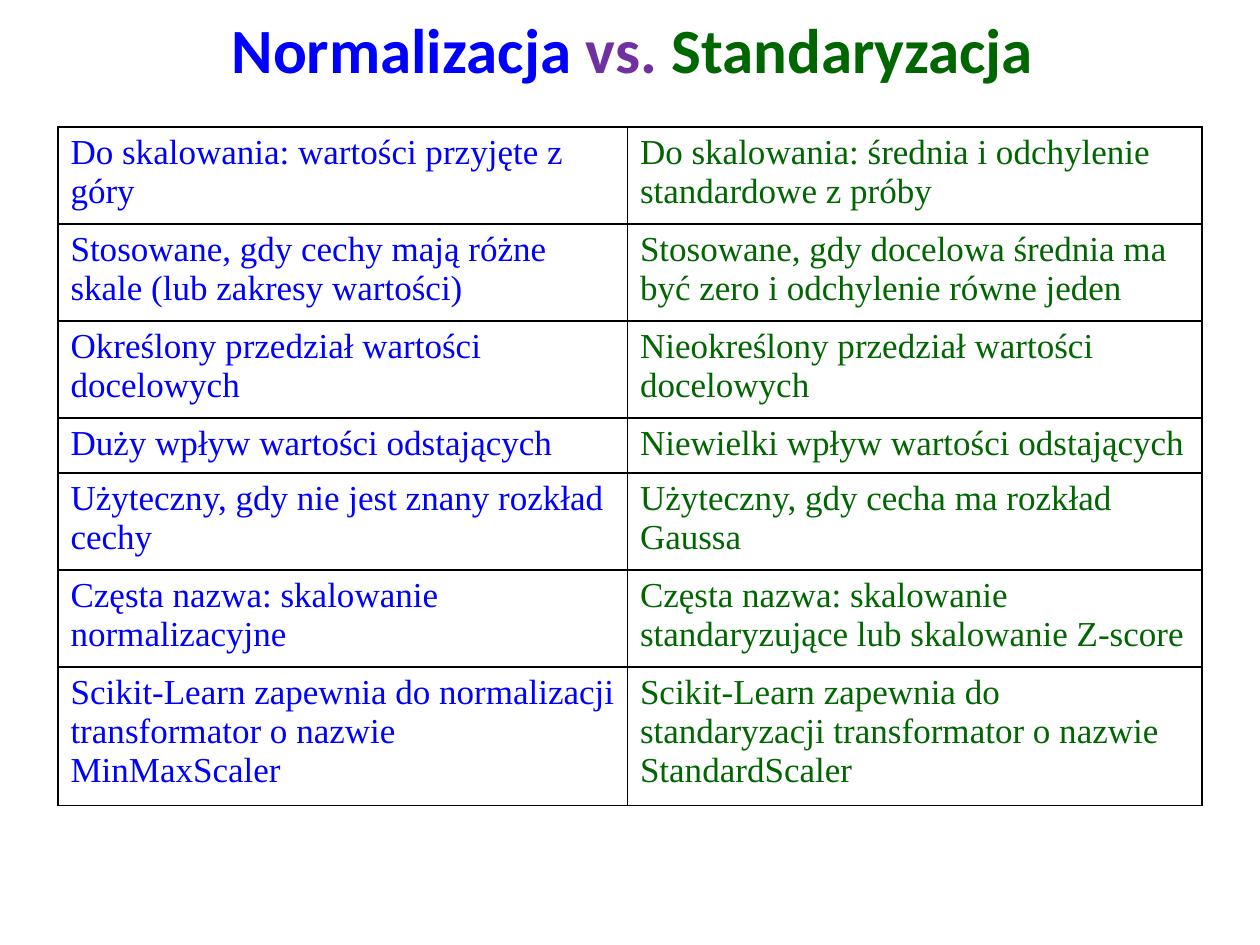
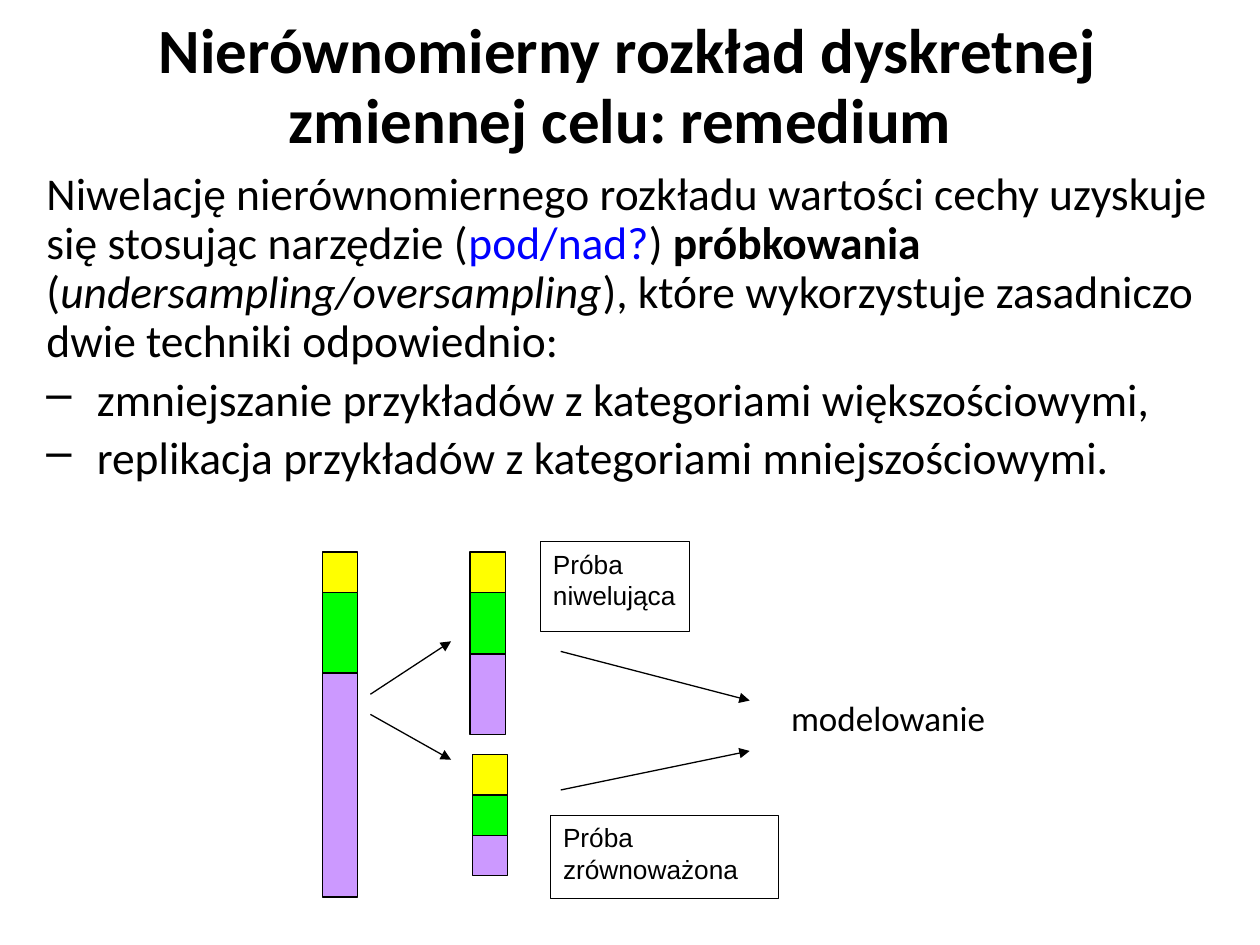
from lxml.etree import SubElement
from pptx import Presentation
from pptx.dml.color import RGBColor
from pptx.enum.shapes import MSO_CONNECTOR, MSO_SHAPE
from pptx.enum.text import MSO_ANCHOR, PP_ALIGN
from pptx.oxml import parse_xml
from pptx.oxml.ns import nsdecls, qn
from pptx.util import Inches, Pt

BLACK, WHITE, BLUE, GREEN, PURPLE = "000000", "FFFFFF", "0000FF", "006600", "7030A0"
STACK_COLORS = ("FFFF00", "00FF00", "CC99FF")
LINE_WIDTH = 0.75

COMPARISON = [
    ("Do skalowania: wartości przyjęte z góry",
     "Do skalowania: średnia i odchylenie standardowe z próby"),
    ("Stosowane, gdy cechy mają różne skale (lub zakresy wartości)",
     "Stosowane, gdy docelowa średnia ma być zero i odchylenie równe jeden"),
    ("Określony przedział wartości docelowych",
     "Nieokreślony przedział wartości docelowych"),
    ("Duży wpływ wartości odstających",
     "Niewielki wpływ wartości odstających"),
    ("Użyteczny, gdy nie jest znany rozkład cechy",
     "Użyteczny, gdy cecha ma rozkład Gaussa"),
    ("Częsta nazwa: skalowanie normalizacyjne",
     "Częsta nazwa: skalowanie standaryzujące lub skalowanie Z-score"),
    ("Scikit-Learn zapewnia do normalizacji transformator o nazwie MinMaxScaler",
     "Scikit-Learn zapewnia do standaryzacji transformator o nazwie StandardScaler"),
]
ROW_HEIGHTS = (0.77, 0.77, 0.77, 0.43, 0.77, 0.77, 1.1)
COLUMN_WIDTHS = (4.52, 4.56)


def rgb(color):
    return RGBColor.from_string(color)


def add_run(paragraph, text, size, font="Calibri", color=BLACK, bold=False, italic=False):
    run = paragraph.add_run()
    run.text = text
    run.font.name = font
    run.font.size = Pt(size)
    run.font.color.rgb = rgb(color)
    run.font.bold = bold
    run.font.italic = italic


def add_text_box(slide, box, wrap=True):
    frame = slide.shapes.add_textbox(*map(Inches, box)).text_frame
    frame.word_wrap = wrap
    return frame


def add_title(slide, box, lines, line_spacing=None):
    frame = add_text_box(slide, box)
    frame.vertical_anchor = MSO_ANCHOR.MIDDLE
    paragraph = frame.paragraphs[0]
    paragraph.alignment = PP_ALIGN.CENTER
    if line_spacing:
        paragraph.line_spacing = Pt(line_spacing)
    for index, runs in enumerate(lines):
        if index:
            paragraph.add_line_break()
        for text, color in runs:
            add_run(paragraph, text, 36, color=color, bold=True)


def add_borders(cell):
    properties = cell._tc.get_or_add_tcPr()
    for index, side in enumerate(("lnL", "lnR", "lnT", "lnB")):
        properties.insert(index, parse_xml(
            f'<a:{side} {nsdecls("a")} w="{Pt(1)}"><a:solidFill>'
            f'<a:srgbClr val="{BLACK}"/></a:solidFill></a:{side}>'))


def add_comparison_table(slide, left, top):
    box = (left, top, sum(COLUMN_WIDTHS), sum(ROW_HEIGHTS))
    table = slide.shapes.add_table(
        len(COMPARISON), len(COLUMN_WIDTHS), *map(Inches, box)).table
    table.first_row = table.horz_banding = False
    for column, width in zip(table.columns, COLUMN_WIDTHS):
        column.width = Inches(width)
    for row, height, texts in zip(table.rows, ROW_HEIGHTS, COMPARISON):
        row.height = Inches(height)
        for cell, text, color in zip(row.cells, texts, (BLUE, GREEN)):
            cell.fill.background()
            add_borders(cell)
            add_run(cell.text_frame.paragraphs[0], text, 20, "Times New Roman", color)


def add_body(slide, box):
    frame = add_text_box(slide, box)
    intro = frame.paragraphs[0]
    for text, style in (
        ("Niwelację nierównomiernego rozkładu wartości cechy uzyskuje się stosując narzędzie (", {}),
        ("pod/nad?", {"color": BLUE}),
        (") ", {}),
        ("próbkowania ", {"bold": True}),
        ("(", {}),
        ("undersampling/oversampling", {"italic": True}),
        ("), które wykorzystuje zasadniczo dwie techniki odpowiednio:", {}),
    ):
        add_run(intro, text, 26, **style)
    for text in ("zmniejszanie przykładów z kategoriami większościowymi,",
                 "replikacja przykładów z kategoriami mniejszościowymi."):
        paragraph = frame.add_paragraph()
        paragraph.level = 1
        add_run(paragraph, text, 26)
    for paragraph in frame.paragraphs:
        paragraph.line_spacing = 0.9
        paragraph.space_before = Pt(5.2)
    for paragraph in frame.paragraphs[1:]:
        properties = paragraph._p.get_or_add_pPr()
        properties.set("marL", str(Inches(0.4)))
        properties.set("indent", str(-Inches(0.4)))
        SubElement(properties, qn("a:buChar"), char="–")


def add_box(slide, box, fill):
    shape = slide.shapes.add_shape(MSO_SHAPE.RECTANGLE, *map(Inches, box))
    shape.shadow.inherit = False
    shape.fill.solid()
    shape.fill.fore_color.rgb = rgb(fill)
    shape.line.color.rgb = rgb(BLACK)
    shape.line.width = Pt(LINE_WIDTH)
    return shape


def add_stack(slide, left, top, heights):
    for height, color in zip(heights, STACK_COLORS):
        add_box(slide, (left, top, 0.28, height), color)
        top += height


def add_label(slide, box, text):
    frame = add_box(slide, box, WHITE).text_frame
    frame.word_wrap = True
    frame.vertical_anchor = MSO_ANCHOR.TOP
    paragraph = frame.paragraphs[0]
    paragraph.alignment = PP_ALIGN.LEFT
    paragraph.space_after = Pt(10)
    add_run(paragraph, text, 15, "Arial")


def add_arrow(slide, *ends):
    connector = slide.shapes.add_connector(MSO_CONNECTOR.STRAIGHT, *map(Inches, ends))
    connector.line.color.rgb = rgb(BLACK)
    connector.line.width = Pt(LINE_WIDTH)
    SubElement(connector.line._get_or_add_ln(), qn("a:tailEnd"), type="triangle")
    SubElement(connector._element.spPr, qn("a:effectLst"))


def add_sampling_diagram(slide, left, top):
    for x, y, heights in ((0, 0.08, (0.32, 0.64, 1.78)),
                          (1.17, 0.08, (0.32, 0.49, 0.64)),
                          (1.19, 1.69, (0.32, 0.32, 0.32))):
        add_stack(slide, left + x, top + y, heights)
    for x, y, end_x, end_y in ((0.38, 1.21, 1.02, 0.79), (0.38, 1.37, 1.02, 1.73),
                               (1.89, 0.87, 3.39, 1.26), (1.89, 1.97, 3.39, 1.66)):
        add_arrow(slide, left + x, top + y, left + end_x, top + end_y)
    add_label(slide, (left + 1.73, top, 1.18, 0.71), "Próba niwelująca")
    add_label(slide, (left + 1.81, top + 2.17, 1.81, 0.66), "Próba zrównoważona")
    result = add_text_box(slide, (left + 3.62, top + 1.18, 1.76, 0.44), wrap=False)
    add_run(result.paragraphs[0], "modelowanie", 20)


def build_comparison_slide(slide):
    add_title(slide, (0, 0.05, 10.04, 0.67), [
        [("Normalizacja", BLUE), (" vs. ", PURPLE), ("Standaryzacja", GREEN)]])
    add_comparison_table(slide, 0.46, 1.01)


def build_sampling_slide(slide):
    add_title(slide, (-0.16, 0.05, 10.28, 1.26), [
        [("Nierównomierny rozkład dyskretnej", BLACK)],
        [("zmiennej celu: remedium ", BLACK)]], line_spacing=40)
    add_sampling_diagram(slide, 2.56, 4.3)
    add_body(slide, (0.27, 1.31, 9.42, 2.52))


def main():
    presentation = Presentation()
    presentation.slide_width = Inches(10)
    presentation.slide_height = Inches(7.5)
    for build in (build_comparison_slide, build_sampling_slide):
        build(presentation.slides.add_slide(presentation.slide_layouts[6]))
    presentation.save("out.pptx")


if __name__ == "__main__":
    main()
